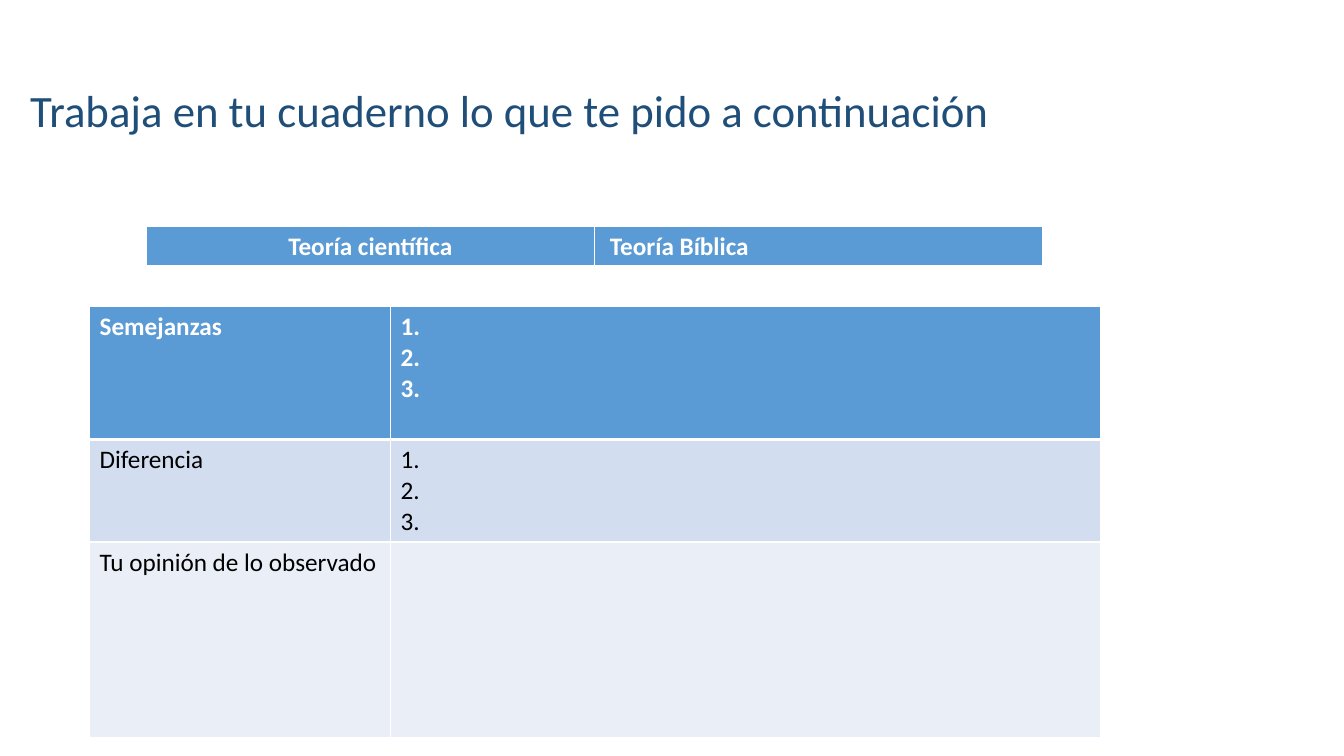
from pptx import Presentation
from pptx.dml.color import RGBColor
from pptx.enum import text
from pptx.oxml import parse_xml
from pptx.oxml import ns
from pptx.util import Pt

WHITE = RGBColor(0xFF, 0xFF, 0xFF)
BLACK = RGBColor(0, 0, 0)
NAVY = RGBColor(0x1F, 0x4E, 0x79)
BLUE = RGBColor(0x5B, 0x9B, 0xD5)
PALE = RGBColor(0xD2, 0xDE, 0xEF)
PALER = RGBColor(0xEA, 0xEF, 0xF7)

TITLE = "Trabaja en tu cuaderno lo que te pido a continuación"
NUMBERS = ["1.", "2.", "3."]
THEORIES = {
    "left": 104.5, "top": 161.5, "columns": [320, 320], "heights": [28.5],
    "rows": [[["Teoría científica"], ["Teoría Bíblica"]]],
}
COMPARISON = {
    "left": 64, "top": 219, "columns": [215, 507], "heights": [95, 73, 139.5],
    "rows": [
        [["Semejanzas"], NUMBERS],
        [["Diferencia"], NUMBERS],
        [["Tu opinión de lo observado"], [""]],
    ],
}
ROW_FILLS = [BLUE, PALE, PALER]


def write(frame, lines, size=18, color=BLACK, bold=False,
          align=text.PP_ALIGN.LEFT, spacing=1.0):
    for index, line in enumerate(lines):
        para = frame.paragraphs[0] if index == 0 else frame.add_paragraph()
        para.alignment = align
        para.line_spacing = spacing
        para.font.size = Pt(size)
        if line:
            span = para.add_run()
            span.text = line
            span.font.name = "Calibri"
            span.font.size = Pt(size)
            span.font.bold = bold
            span.font.color.rgb = color


def add_borders(cell, top, bottom):
    properties = cell._tc.get_or_add_tcPr()
    for side, width in (("L", 1), ("R", 1), ("T", top), ("B", bottom)):
        properties.append(parse_xml(
            f'<a:ln{side} {ns.nsdecls("a")} w="{Pt(width)}"><a:solidFill>'
            f'<a:srgbClr val="{WHITE}"/></a:solidFill></a:ln{side}>'))


def add_grid(page, content):
    columns, heights = content["columns"], content["heights"]
    table = page.shapes.add_table(
        len(heights), len(columns), Pt(content["left"]), Pt(content["top"]),
        Pt(sum(columns)), Pt(sum(heights))).table
    for column, width in zip(table.columns, columns):
        column.width = Pt(width)
    for r, (height, row) in enumerate(zip(heights, content["rows"])):
        table.rows[r].height = Pt(height)
        for c, lines in enumerate(row):
            cell = table.cell(r, c)
            add_borders(cell, 3 if r == 1 else 1, 3 if r == 0 else 1)
            cell.fill.solid()
            cell.fill.fore_color.rgb = ROW_FILLS[r]
            write(cell.text_frame, lines, color=BLACK if r else WHITE, bold=r == 0)
    return table


def main():
    deck = Presentation()
    deck.slide_width, deck.slide_height = Pt(960), Pt(540)
    page = deck.slides.add_slide(deck.slide_layouts[5])

    title = page.shapes.title
    title.left, title.top, title.width, title.height = Pt(14.4), Pt(28.8), Pt(938), Pt(104.4)
    title.text_frame.vertical_anchor = text.MSO_ANCHOR.MIDDLE
    write(title.text_frame, [TITLE], size=32, color=NAVY, spacing=0.9)

    theories = add_grid(page, THEORIES)
    theories.cell(0, 0).text_frame.paragraphs[0].alignment = text.PP_ALIGN.CENTER
    theories.cell(0, 1).margin_left = Pt(11.2)
    add_grid(page, COMPARISON)

    deck.save("out.pptx")


if __name__ == "__main__":
    main()
